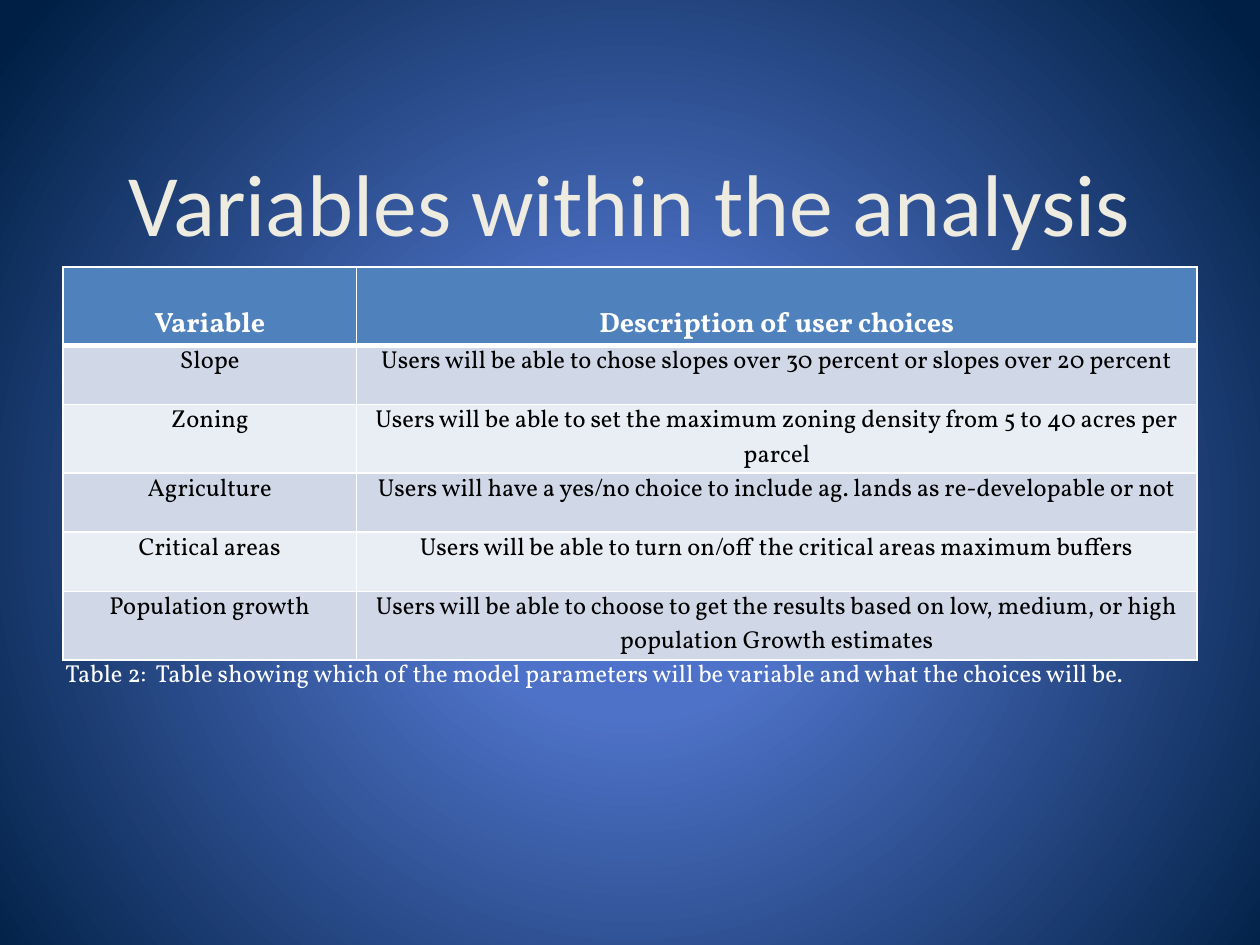
import pptx
import pptx.dml.color
import pptx.enum.text
import pptx.oxml
import pptx.oxml.ns
import pptx.util

Inches = pptx.util.Inches
ALIGN = pptx.enum.text.PP_ALIGN
ANCHOR = pptx.enum.text.MSO_ANCHOR

COLOURS = {
    "glow": "4D75D6",
    "middle": "4E72C7",
    "edge": "001F44",
    "title": "EEECE1",
    "white": "FFFFFF",
    "black": "000000",
    "header": "4F81BD",
    "odd": "D0D8E8",
    "even": "E9EDF4",
}

HEADINGS = ("Variable", "Description of user choices")
CHOICES = [
    ("Slope", "Users will be able to chose slopes over 30 percent or slopes over 20 percent"),
    ("Zoning", "Users will be able to set the maximum zoning density from 5 to 40 acres per parcel"),
    ("Agriculture", "Users will have a yes/no choice to include ag. lands as re-developable or not"),
    ("Critical areas", "Users will be able to turn on/off the critical areas maximum buffers"),
    ("Population growth", "Users will be able to choose to get the results based on low, medium, "
                          "or high population Growth estimates"),
]
CAPTION = ("Table 2:  Table showing which of the model parameters "
           "will be variable and what the choices will be.")


class SlideBuilder:
    title_font = "Calibri"
    body_font = "Vollkorn"

    def __init__(self, deck):
        self.page = deck.slides.add_slide(deck.slide_layouts[5])

    def format_paragraph(self, para, font, size, colour, bold=False, align=ALIGN.CENTER):
        para.alignment = align
        para.font.name = font
        para.font.size = pptx.util.Pt(size)
        para.font.bold = bold
        para.font.color.rgb = pptx.dml.color.RGBColor.from_string(COLOURS[colour])

    def background(self, stops):
        stop_list = "".join(
            f'<a:gs pos="{percent * 1000}"><a:srgbClr val="{COLOURS[colour]}"/></a:gs>'
            for percent, colour in stops)
        self.page._element.cSld.insert(0, pptx.oxml.parse_xml(
            f'<p:bg {pptx.oxml.ns.nsdecls("p", "a")}><p:bgPr>'
            f'<a:gradFill rotWithShape="1"><a:gsLst>{stop_list}</a:gsLst><a:path path="circle">'
            '<a:fillToRect l="10000" t="110000" r="10000" b="100000"/></a:path></a:gradFill>'
            '<a:effectLst/></p:bgPr></p:bg>'))

    def title(self, text, left, top, width, height):
        box = self.page.shapes.title
        box.left, box.top = Inches(left), Inches(top)
        box.width, box.height = Inches(width), Inches(height)
        frame = box.text_frame
        frame.text = text
        frame.vertical_anchor = ANCHOR.BOTTOM
        frame.auto_size = pptx.enum.text.MSO_AUTO_SIZE.NONE
        frame.margin_left = frame.margin_right = frame.margin_bottom = 0
        self.format_paragraph(frame.paragraphs[0], self.title_font, 50, "title")

    def cell(self, cell, text, fill, size, colour, bold, widths):
        properties = cell._tc.get_or_add_tcPr()
        for side, points in zip("LRTB", widths):
            properties.append(pptx.oxml.parse_xml(
                f'<a:ln{side} {pptx.oxml.ns.nsdecls("a")} w="{pptx.util.Pt(points)}"><a:solidFill>'
                f'<a:srgbClr val="{COLOURS["white"]}"/></a:solidFill></a:ln{side}>'))
        cell.fill.solid()
        cell.fill.fore_color.rgb = pptx.dml.color.RGBColor.from_string(COLOURS[fill])
        cell.margin_left = cell.margin_right = Inches(0.07)
        cell.margin_top = cell.margin_bottom = 0
        cell.text = text
        self.format_paragraph(cell.text_frame.paragraphs[0], self.body_font, size, colour, bold)

    def table(self, headings, records, left, top, column_widths, row_heights):
        table = self.page.shapes.add_table(
            len(row_heights), len(column_widths), Inches(left), Inches(top),
            Inches(sum(column_widths)), Inches(sum(row_heights))).table
        for column, width in zip(table.columns, column_widths):
            column.width = Inches(width)
        for row, height in zip(table.rows, row_heights):
            row.height = Inches(height)
        for column, heading in enumerate(headings):
            cell = table.cell(0, column)
            self.cell(cell, heading, "header", 16, "white", True, (1, 1, 1, 3))
            cell.text_frame.paragraphs[0].line_spacing = 2.0
        for row, record in enumerate(records, 1):
            fill = "odd" if row % 2 else "even"
            widths = (1, 1, 3 if row == 1 else 1, 1)
            for column, text in enumerate(record):
                self.cell(table.cell(row, column), text, fill, 14, "black", False, widths)

    def caption(self, text, left, top, width, height):
        box = self.page.shapes.add_textbox(
            Inches(left), Inches(top), Inches(width), Inches(height))
        frame = box.text_frame
        frame.word_wrap = True
        frame.vertical_anchor = ANCHOR.MIDDLE
        frame.auto_size = pptx.enum.text.MSO_AUTO_SIZE.SHAPE_TO_FIT_TEXT
        frame.text = text
        self.format_paragraph(frame.paragraphs[0], self.body_font, 14, "white", align=ALIGN.LEFT)


def main():
    deck = pptx.Presentation()
    deck.slide_width, deck.slide_height = Inches(10), Inches(7.5)
    builder = SlideBuilder(deck)
    builder.background([(0, "glow"), (25, "middle"), (100, "edge")])
    builder.title("Variables within the analysis", 0.5, 0.77, 9, 1.25)
    builder.table(HEADINGS, CHOICES, 0.5, 2.12, (2.33, 6.67), (0.47, 0.47, 0.54) * 2)
    builder.caption(CAPTION, 0.42, 5.17, 9.08, 0.34)
    deck.save("out.pptx")


if __name__ == "__main__":
    main()
